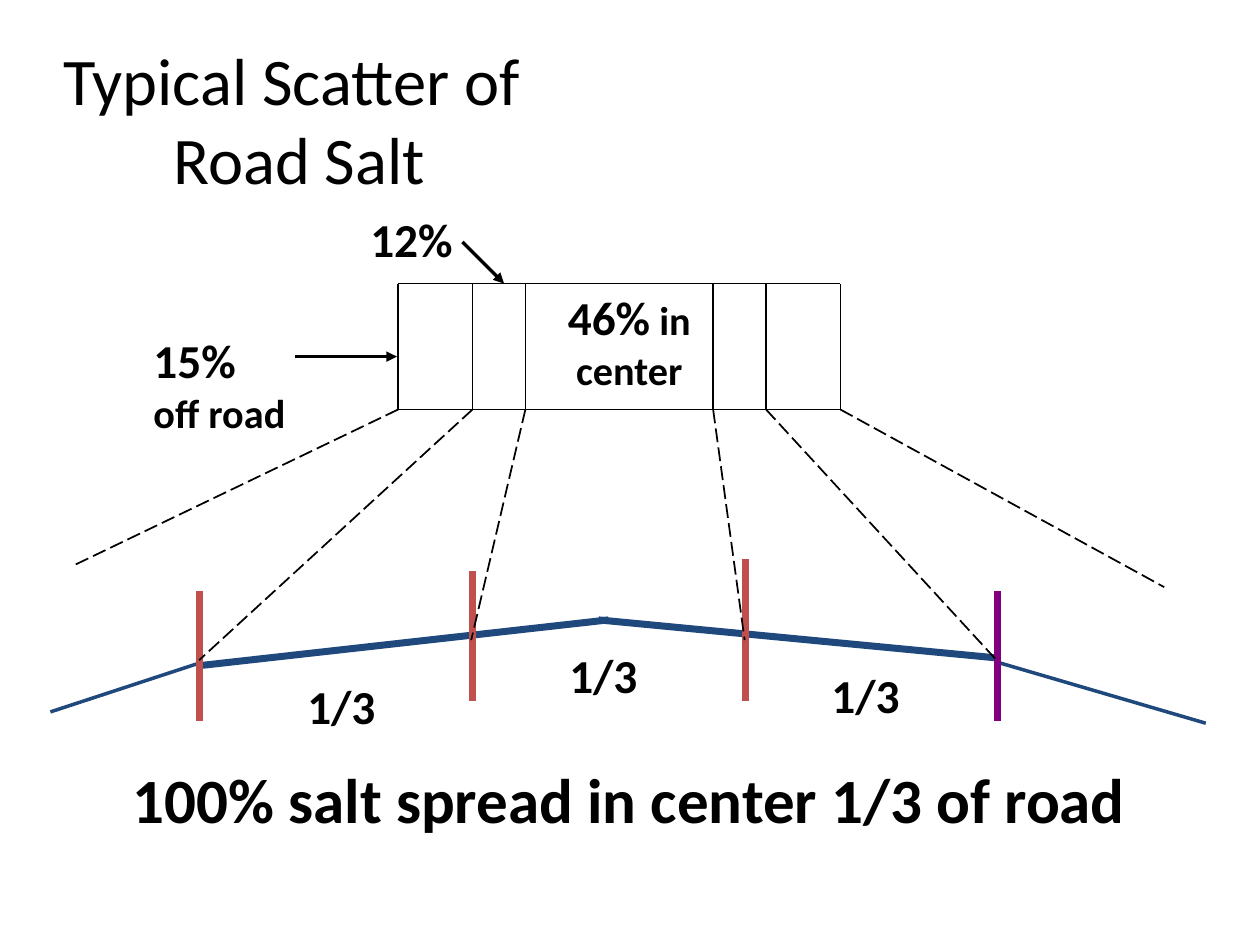
from lxml import etree
from pptx import Presentation
from pptx.dml.color import RGBColor
from pptx.enum.dml import MSO_LINE
from pptx.enum.shapes import MSO_CONNECTOR
from pptx.enum.text import MSO_ANCHOR, MSO_AUTO_SIZE, PP_ALIGN
from pptx.oxml.ns import qn
from pptx.util import Inches, Pt

LEFT, CENTER = PP_ALIGN.LEFT, PP_ALIGN.CENTER
TOP, MIDDLE = MSO_ANCHOR.TOP, MSO_ANCHOR.MIDDLE
DASH = MSO_LINE.LONG_DASH
STRAIGHT = MSO_CONNECTOR.STRAIGHT
FIXED = MSO_AUTO_SIZE.NONE

THEME = {
    "font": "Calibri", "ink": "000000", "road": "1F497D",
    "mark": "C0504D", "edge": "800080",
    "title": 38, "close": 36, "large": 27, "small": 23,
    "thin": 1, "mid": 2, "thick": 4,
}

TITLE = [[("Typical Scatter of ", "title")], [("Road Salt", "title")]]
TITLE_BOX = (0.25, 0.25, 4.25, 1.38)

LABELS = [
    ((2.34, 5.33, 0.82, 0.54), LEFT, [[("1/3", "large")]]),
    ((4.42, 5.08, 0.83, 0.54), LEFT, [[("1/3", "large")]]),
    ((6.5, 5.24, 0.74, 0.54), LEFT, [[("1/3", "large")]]),
    ((4.25, 2.24, 1.49, 0.93), CENTER,
     [[("46%", "large"), (" in center", "small")]]),
    ((2.84, 1.62, 1.32, 0.54), LEFT, [[("12%", "large")]]),
    ((1.12, 2.58, 1.37, 1.5), LEFT,
     [[("15%", "large")], [("off road", "small")]]),
    ((0.33, 5.99, 9.33, 0.69), CENTER,
     [[("100% salt spread in center 1/3 of road", "close")]]),
]

ROAD = [
    ((1.61, 5.28, 4.83, 4.92), "thick"),
    ((4.75, 4.92, 7.89, 5.22), "thick"),
    ((1.59, 5.26, 0.4, 5.65), "mid"),
    ((7.93, 5.26, 9.57, 5.74), "mid"),
]
POSTS = [
    (1.58, 4.69, 5.72, "mark"),
    (7.92, 4.69, 5.72, "edge"),
    (3.75, 4.53, 5.56, "mark"),
    (5.92, 4.44, 5.56, "mark"),
]
BAND_TOP, BAND_BASE = 2.25, 3.25
RAYS = [
    (3.16, (0.58, 4.49)),
    (3.75, (1.58, 5.24)),
    (4.17, (3.74, 5.08)),
    (5.66, (5.91, 5.08)),
    (6.08, (7.91, 5.24)),
    (6.67, (9.24, 4.66)),
]
ARROWS = [(3.67, 1.92, 4, 2.25), (2.34, 2.83, 3.15, 2.83)]


def apply(obj, **vals):
    for key, val in vals.items():
        setattr(obj, key, val)


def draw(slide, ends, tone="ink", width="thin", dash=None, arrow=False):
    item = slide.shapes.add_connector(STRAIGHT, *map(Inches, ends))
    item.line.color.rgb = RGBColor.from_string(THEME[tone])
    item.line.width = Pt(THEME[width])
    if dash:
        item.line.dash_style = dash
    if arrow:
        etree.SubElement(item.line._get_or_add_ln(), qn("a:tailEnd"),
                         type="triangle")
    etree.SubElement(item._element.spPr, qn("a:effectLst"))


def write(shape, paras, align, bold, anchor):
    frame = shape.text_frame
    apply(frame, word_wrap=True, auto_size=FIXED, vertical_anchor=anchor,
          margin_left=Inches(0.1), margin_right=Inches(0.1),
          margin_top=Inches(0.05), margin_bottom=Inches(0.05))
    for num, runs in enumerate(paras):
        para = frame.add_paragraph() if num else frame.paragraphs[0]
        apply(para, alignment=align, space_before=Pt(0))
        for text, size in runs:
            run = para.add_run()
            run.text = text
            apply(run.font, name=THEME["font"], size=Pt(THEME[size]),
                  bold=bold)
            run.font.color.rgb = RGBColor.from_string(THEME["ink"])


def main():
    deck = Presentation()
    apply(deck, slide_width=Inches(10), slide_height=Inches(7.5))
    slide = deck.slides.add_slide(deck.slide_layouts[5])

    for ends, width in ROAD:
        draw(slide, ends, "road", width)
    for x, top, base, tone in POSTS:
        draw(slide, (x, top, x, base), tone, "thick")
    for y in (BAND_TOP, BAND_BASE):
        draw(slide, (RAYS[0][0], y, RAYS[-1][0], y))
    for x, foot in RAYS:
        draw(slide, (x, BAND_TOP, x, BAND_BASE))
        draw(slide, (x, BAND_BASE, *foot), dash=DASH)
    for ends in ARROWS:
        draw(slide, ends, width="mid", arrow=True)

    for box, align, paras in LABELS:
        label = slide.shapes.add_textbox(*map(Inches, box))
        write(label, paras, align, True, TOP)

    title = slide.shapes.title
    left, top, width, height = map(Inches, TITLE_BOX)
    apply(title, left=left, top=top, width=width, height=height)
    write(title, TITLE, CENTER, False, MIDDLE)

    deck.save("out.pptx")


if __name__ == "__main__":
    main()
